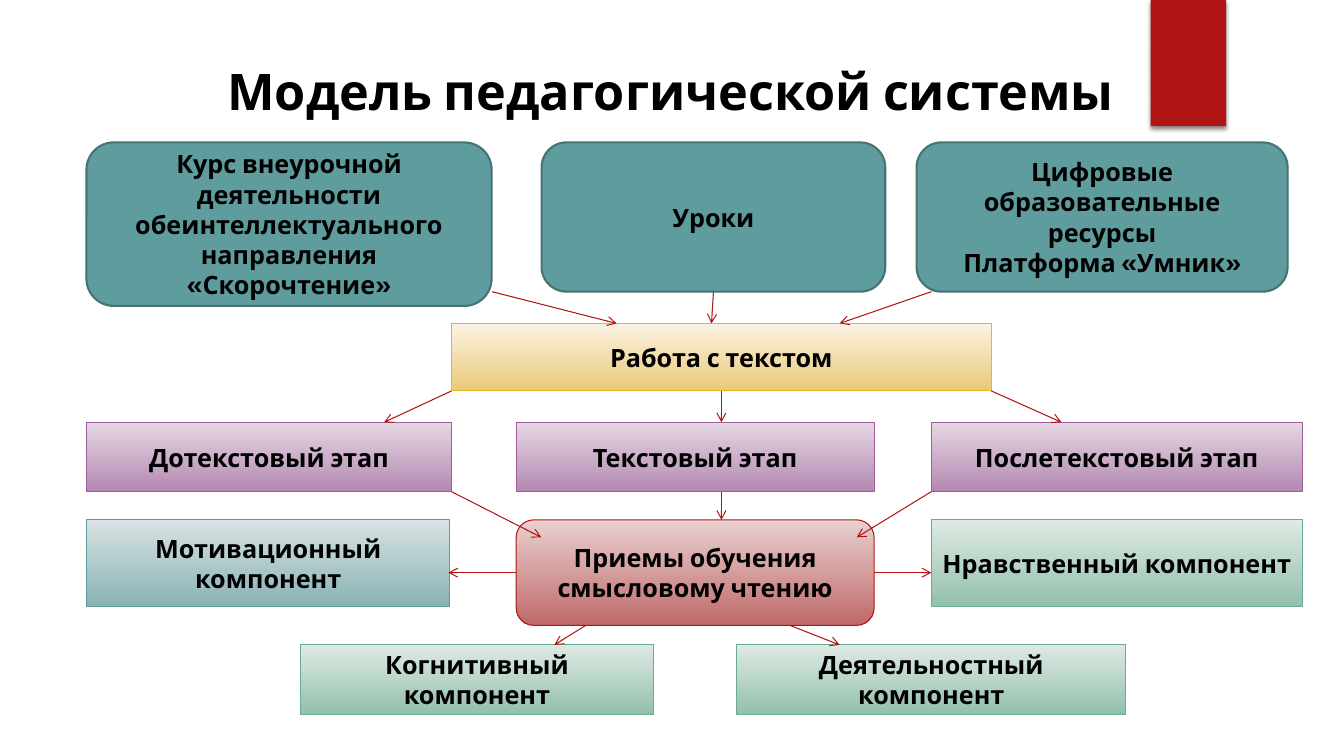
from dataclasses import dataclass
from typing import Optional

import pptx
import pptx.dml.color
import pptx.enum.shapes
import pptx.enum.text
import pptx.oxml
import pptx.oxml.ns
import pptx.util

Cm = pptx.util.Cm
Pt = pptx.util.Pt
RGBColor = pptx.dml.color.RGBColor
ShapeKind = pptx.enum.shapes.MSO_SHAPE

BLACK = RGBColor(0x00, 0x00, 0x00)
RED = RGBColor(0xB0, 0x15, 0x13)
TEAL = RGBColor(0x5F, 0x9C, 0x9D)
DARK_TEAL = RGBColor(0x46, 0x73, 0x74)
GOLD = RGBColor(0xE6, 0xB7, 0x29)
PURPLE = RGBColor(0x9E, 0x5E, 0x9B)
GREEN = RGBColor(0x6A, 0xAC, 0x90)
PALE_GOLD = RGBColor(0xFA, 0xF2, 0xE3)
SOFT_GOLD = RGBColor(0xEC, 0xC9, 0x77)
PALE_PURPLE = RGBColor(0xE4, 0xD8, 0xE3)
SOFT_PURPLE = RGBColor(0xB4, 0x88, 0xB2)
PALE_RED = RGBColor(0xE8, 0xD1, 0xD0)
SOFT_RED = RGBColor(0xC0, 0x69, 0x69)
PALE_TEAL = RGBColor(0xD8, 0xE3, 0xE4)
SOFT_TEAL = RGBColor(0x89, 0xB2, 0xB3)
PALE_GREEN = RGBColor(0xDE, 0xEA, 0xE4)
SOFT_GREEN = RGBColor(0x93, 0xC0, 0xAC)

LEFT, BOTTOM, RIGHT = 1, 2, 3
NAMESPACE = pptx.oxml.ns.nsdecls("a")


@dataclass(frozen=True)
class Style:
    colors: tuple[RGBColor, ...]
    line: RGBColor
    line_width: float = 0.75
    kind: int = ShapeKind.RECTANGLE


@dataclass(frozen=True)
class Block:
    key: str
    style: Style
    left: float
    top: float
    width: float
    height: float
    text: str


@dataclass(frozen=True)
class Arrow:
    start: tuple[float, float]
    end: tuple[float, float]
    source: Optional[str] = None
    side: int = BOTTOM


RESOURCE = Style((TEAL,), DARK_TEAL, 1.5, ShapeKind.ROUNDED_RECTANGLE)
WORK = Style((PALE_GOLD, SOFT_GOLD), GOLD)
STAGE = Style((PALE_PURPLE, SOFT_PURPLE), PURPLE)
TECHNIQUE = Style((PALE_RED, SOFT_RED), RED, kind=ShapeKind.ROUNDED_RECTANGLE)
MOTIVE = Style((PALE_TEAL, SOFT_TEAL), TEAL)
COMPONENT = Style((PALE_GREEN, SOFT_GREEN), GREEN)

RESOURCE_TOP, WORK_TOP, STAGE_TOP, TECHNIQUE_TOP, COMPONENT_TOP = 3.59, 8.15, 10.64, 13.1, 16.25
RESOURCE_END, WORK_END, STAGE_END, TECHNIQUE_END = 7.35, 9.85, 12.39, 15.76
LEFT_COLUMN, MIDDLE_COLUMN, RIGHT_COLUMN = 2.18, 13.01, 23.47
AXIS, TECHNIQUE_MIDDLE = 18.18, 14.43

BLOCKS = [
    Block("course", RESOURCE, LEFT_COLUMN, RESOURCE_TOP, 10.21, 4.12,
          "Курс внеурочной деятельности обеинтеллектуального\nнаправления «Скорочтение»"),
    Block("lessons", RESOURCE, 13.65, RESOURCE_TOP, 8.66, 3.76, "Уроки"),
    Block("digital", RESOURCE, 23.1, RESOURCE_TOP, 9.35, 3.76,
          "Цифровые образовательные ресурсы\nПлатформа «Умник»"),
    Block("work", WORK, 11.38, WORK_TOP, 13.6, 1.7, "Работа с текстом"),
    Block("before", STAGE, LEFT_COLUMN, STAGE_TOP, 9.2, 1.75, "Дотекстовый этап"),
    Block("during", STAGE, MIDDLE_COLUMN, STAGE_TOP, 9.02, 1.75, "Текстовый этап"),
    Block("after", STAGE, RIGHT_COLUMN, STAGE_TOP, 9.35, 1.75, "Послетекстовый этап"),
    Block("techniques", TECHNIQUE, MIDDLE_COLUMN, TECHNIQUE_TOP, 9.02, 2.66,
          "Приемы обучения смысловому чтению"),
    Block("motivation", MOTIVE, LEFT_COLUMN, TECHNIQUE_TOP, 9.16, 2.18, "Мотивационный компонент"),
    Block("cognition", COMPONENT, 7.57, COMPONENT_TOP, 8.9, 1.75, "Когнитивный\nкомпонент"),
    Block("activity", COMPONENT, 18.57, COMPONENT_TOP, 9.8, 1.75, "Деятельностный компонент"),
    Block("morality", COMPONENT, RIGHT_COLUMN, TECHNIQUE_TOP, 9.35, 2.18, "Нравственный компонент"),
]

ARROWS = [
    Arrow((12.4, RESOURCE_END), (15.54, WORK_TOP)),
    Arrow((RIGHT_COLUMN, RESOURCE_END), (21.16, WORK_TOP)),
    Arrow((17.98, RESOURCE_END), (17.93, WORK_TOP), "lessons"),
    Arrow((11.38, WORK_END), (9.68, STAGE_TOP)),
    Arrow((24.98, WORK_END), (26.75, STAGE_TOP)),
    Arrow((AXIS, WORK_END), (AXIS, STAGE_TOP), "work"),
    Arrow((11.38, STAGE_END), (13.64, 13.54)),
    Arrow((AXIS, STAGE_END), (AXIS, TECHNIQUE_TOP)),
    Arrow((RIGHT_COLUMN, STAGE_END), (21.59, 13.54)),
    Arrow((MIDDLE_COLUMN, TECHNIQUE_MIDDLE), (11.3, TECHNIQUE_MIDDLE), "techniques", LEFT),
    Arrow((22.03, TECHNIQUE_MIDDLE), (RIGHT_COLUMN, TECHNIQUE_MIDDLE), "techniques", RIGHT),
    Arrow((14.76, TECHNIQUE_END), (13.97, COMPONENT_TOP)),
    Arrow((19.91, TECHNIQUE_END), (21.16, COMPONENT_TOP)),
]


def write_text(shape, text: str, size: float) -> None:
    frame = shape.text_frame
    frame.text = text
    frame_format = {
        "word_wrap": True,
        "auto_size": pptx.enum.text.MSO_AUTO_SIZE.NONE,
        "vertical_anchor": pptx.enum.text.MSO_ANCHOR.MIDDLE,
    }
    for attribute, value in frame_format.items():
        setattr(frame, attribute, value)
    font_format = {"name": "Cabin", "size": Pt(size), "bold": True}
    for paragraph in frame.paragraphs:
        paragraph.alignment = pptx.enum.text.PP_ALIGN.CENTER
        for run in paragraph.runs:
            for attribute, value in font_format.items():
                setattr(run.font, attribute, value)
            run.font.color.rgb = BLACK


def fill_shape(shape, colors: tuple[RGBColor, ...]) -> None:
    if len(colors) == 1:
        shape.fill.solid()
        shape.fill.fore_color.rgb = colors[0]
        return
    shape.fill.gradient()
    shape.fill.gradient_angle = 270
    for stop, color in zip(shape.fill.gradient_stops, colors):
        stop.color.rgb = color


def draw_block(slide, block: Block):
    box = map(Cm, (block.left, block.top, block.width, block.height))
    shape = slide.shapes.add_shape(block.style.kind, *box)
    shape.shadow.inherit = False
    fill_shape(shape, block.style.colors)
    shape.line.color.rgb = block.style.line
    shape.line.width = Pt(block.style.line_width)
    write_text(shape, block.text, 18)
    return shape


def draw_arrow(slide, arrow: Arrow, shapes: dict) -> None:
    connector = slide.shapes.add_connector(
        pptx.enum.shapes.MSO_CONNECTOR.STRAIGHT, *map(Cm, arrow.start + arrow.end))
    if arrow.source:
        connector.begin_connect(shapes[arrow.source], arrow.side)
    connector.line.color.rgb = RED
    connector.line.width = Pt(0.75)
    properties = connector._element.spPr
    outline = properties.find(pptx.oxml.ns.qn("a:ln"))
    outline.append(pptx.oxml.parse_xml(f'<a:tailEnd {NAMESPACE} type="arrow"/>'))
    properties.append(pptx.oxml.parse_xml(f"<a:effectLst {NAMESPACE}/>"))


def draw_ribbon(slide) -> None:
    ribbon = slide.shapes.add_shape(ShapeKind.RECTANGLE, *map(Cm, (29, 0, 1.9, 3.18)))
    ribbon.shadow.inherit = False
    fill_shape(ribbon, (RED,))
    ribbon.line.fill.background()
    effects = ribbon._element.spPr.find(pptx.oxml.ns.qn("a:effectLst"))
    effects.append(pptx.oxml.parse_xml(
        f'<a:outerShdw {NAMESPACE} blurRad="38100" dist="25400" dir="5400000" rotWithShape="0">'
        '<a:srgbClr val="000000"><a:alpha val="45000"/></a:srgbClr></a:outerShdw>'))


def main() -> None:
    presentation = pptx.Presentation()
    presentation.slide_width, presentation.slide_height = Cm(33.87), Cm(19.05)
    slide = presentation.slides.add_slide(presentation.slide_layouts[5])
    draw_ribbon(slide)
    title = slide.shapes.title
    title_format = {"left": 2.97, "top": 1.04, "width": 27.86, "height": 2.46}
    for attribute, value in title_format.items():
        setattr(title, attribute, Cm(value))
    write_text(title, "Модель педагогической системы", 36)
    shapes = {block.key: draw_block(slide, block) for block in BLOCKS}
    for arrow in ARROWS:
        draw_arrow(slide, arrow, shapes)
    presentation.save("out.pptx")


if __name__ == "__main__":
    main()
